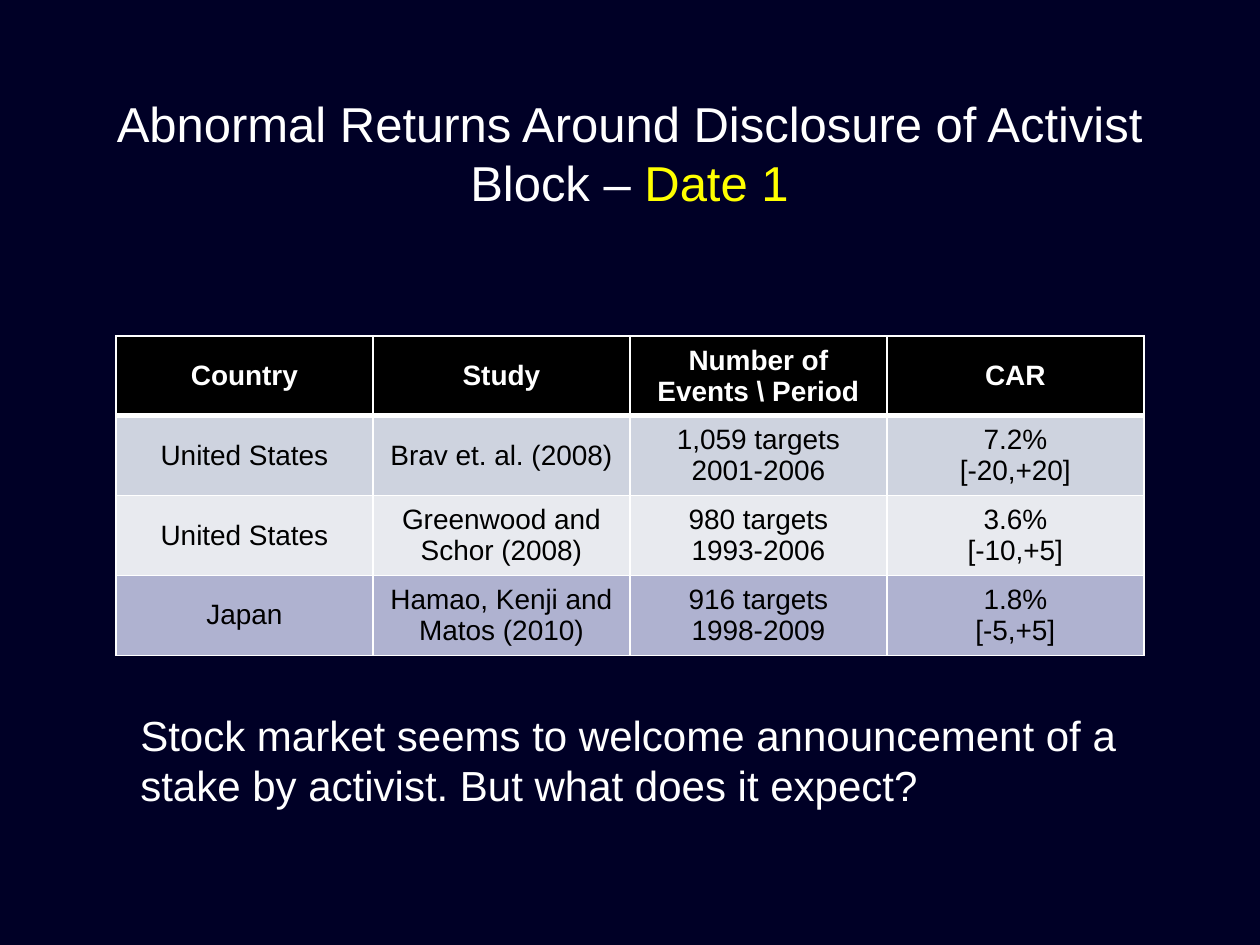
from dataclasses import dataclass

from lxml import etree
from pptx import Presentation, util as u
from pptx.dml import color
from pptx.enum import text
from pptx.oxml import ns

SCALE = 914400 / 126
FONT = "Arial"
COLORS = {
    "background": "000026",
    "white": "FFFFFF",
    "black": "000000",
    "accent": "FFFF00",
    "us_1": "CED3DF",
    "us_2": "E8EAEF",
    "japan": "AFB2D0",
}


@dataclass(frozen=True)
class Box:
    left: int
    top: int
    width: int
    height: int

    def emu(self) -> list[u.Emu]:
        return [px(v) for v in (self.left, self.top, self.width, self.height)]


@dataclass(frozen=True)
class Row:
    cells: tuple[str, ...]
    fill: str
    color: str = "black"
    bold: bool = False


HEADER = Row(("Country", "Study", "Number of Events \\ Period", "CAR"),
             "black", "white", True)
STUDIES = [
    Row(("United States", "Brav et. al. (2008)",
         "1,059 targets\n2001-2006", "7.2%\v[-20,+20]"), "us_1"),
    Row(("United States", "Greenwood and Schor (2008)",
         "980 targets\n1993-2006", "3.6%\v[-10,+5]"), "us_2"),
    Row(("Japan", "Hamao, Kenji and Matos (2010)",
         "916 targets\n1998-2009", "1.8%\v[-5,+5]"), "japan"),
]


def px(value: int) -> u.Emu:
    return u.Emu(round(value * SCALE))


def rgb(name: str) -> color.RGBColor:
    return color.RGBColor.from_string(COLORS[name])


def add_run(p, content: str, *, size: int, fill: str = "white",
            bold: bool = False) -> None:
    r = p.add_run()
    r.text = content
    r.font.name = FONT
    r.font.size = u.Pt(size)
    r.font.bold = bold
    r.font.color.rgb = rgb(fill)


def write(tf, content: str, *, align=text.PP_ALIGN.LEFT, **font) -> None:
    for i, paragraph in enumerate(content.split("\n")):
        p = tf.paragraphs[0] if i == 0 else tf.add_paragraph()
        p.alignment = align
        for j, line in enumerate(paragraph.split("\v")):
            if j:
                p.add_line_break()
            add_run(p, line, **font)


def add_text(s, box: Box, content: str, *, wrap: bool = True,
             anchor=text.MSO_ANCHOR.TOP, **fmt):
    tf = s.shapes.add_textbox(*box.emu()).text_frame
    tf.word_wrap = wrap
    tf.vertical_anchor = anchor
    write(tf, content, **fmt)
    return tf


def set_border(cell, side: str, points: int) -> None:
    tc_pr = cell._tc.get_or_add_tcPr()
    ln = etree.SubElement(tc_pr, ns.qn(f"a:ln{side}"), w=str(u.Pt(points)))
    fill = etree.SubElement(ln, ns.qn("a:solidFill"))
    etree.SubElement(fill, ns.qn("a:srgbClr"), val=COLORS["white"])


def add_study_table(s, box: Box, rows: list[Row]) -> None:
    table = s.shapes.add_table(len(rows), len(rows[0].cells), *box.emu()).table
    for i, row in enumerate(rows):
        for j, content in enumerate(row.cells):
            cell = table.cell(i, j)
            cell.vertical_anchor = text.MSO_ANCHOR.MIDDLE
            widths = {"L": 1, "R": 1, "T": 3 if i == 1 else 1,
                      "B": 3 if i == 0 else 1}
            for side, points in widths.items():
                set_border(cell, side, points)
            cell.fill.solid()
            cell.fill.fore_color.rgb = rgb(row.fill)
            write(cell.text_frame, content, align=text.PP_ALIGN.CENTER,
                  size=16, fill=row.color, bold=row.bold)


def main() -> None:
    prs = Presentation()
    prs.slide_width, prs.slide_height = px(1260), px(945)
    s = prs.slides.add_slide(prs.slide_layouts[6])
    s.background.fill.solid()
    s.background.fill.fore_color.rgb = rgb("background")

    title = add_text(s, Box(94, 73, 1071, 158),
                     "Abnormal Returns Around Disclosure of Activist Block – ",
                     anchor=text.MSO_ANCHOR.MIDDLE,
                     align=text.PP_ALIGN.CENTER, size=28)
    add_run(title.paragraphs[0], "Date 1", size=28, fill="accent")

    add_study_table(s, Box(116, 336, 1028, 300), [HEADER, *STUDIES])

    add_text(s, Box(128, 703, 1058, 115),
             "Stock market seems to welcome announcement of a\n"
             "stake by activist. But what does it expect?",
             wrap=False, size=24)
    prs.save("out.pptx")


if __name__ == "__main__":
    main()
